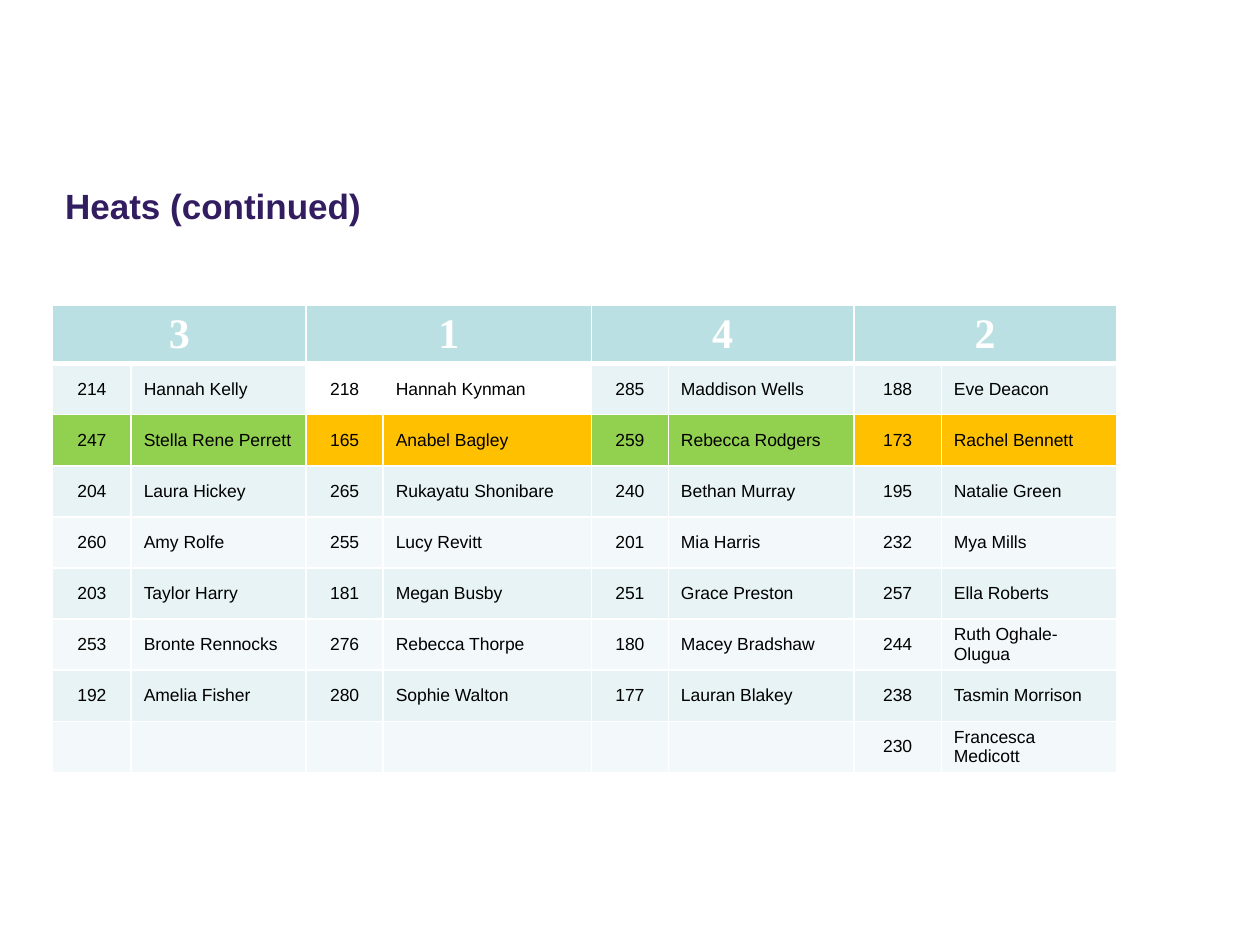
from dataclasses import dataclass

from lxml import etree
from pptx import Presentation
from pptx.dml.color import RGBColor
from pptx.enum import text
from pptx.oxml import ns
from pptx.util import Pt


@dataclass(frozen=True)
class Theme:
    title: str = "321D60"
    ink: str = "000000"
    white: str = "FFFFFF"
    header: str = "BBE0E3"
    bands: tuple = ("E7F3F4", "F3F9FA")
    green: str = "92D050"
    amber: str = "FFC000"
    sans: str = "Arial"
    serif: str = "Times New Roman"
    title_size: int = 20
    header_size: int = 24
    body_size: int = 10


THEME = Theme()
COLUMN_WIDTHS = (45, 100, 44, 119, 44, 106, 50, 100)
HEADER_HEIGHT, ROW_HEIGHT = 33.6, 29.2
HIGHLIGHT_ROW = 2

# Heat number, highlight colour, then runners as (bib, name)
HEATS = (
    ("3", THEME.green, (
        ("214", "Hannah Kelly"), ("247", "Stella Rene Perrett"),
        ("204", "Laura Hickey"), ("260", "Amy Rolfe"),
        ("203", "Taylor Harry"), ("253", "Bronte Rennocks"),
        ("192", "Amelia Fisher"))),
    ("1", THEME.amber, (
        ("218", "Hannah Kynman"), ("165", "Anabel Bagley"),
        ("265", "Rukayatu Shonibare"), ("255", "Lucy Revitt"),
        ("181", "Megan Busby"), ("276", "Rebecca Thorpe"),
        ("280", "Sophie Walton"))),
    ("4", THEME.green, (
        ("285", "Maddison Wells"), ("259", "Rebecca Rodgers"),
        ("240", "Bethan Murray"), ("201", "Mia Harris"),
        ("251", "Grace Preston"), ("180", "Macey Bradshaw"),
        ("177", "Lauran Blakey"))),
    ("2", THEME.amber, (
        ("188", "Eve Deacon"), ("173", "Rachel Bennett"),
        ("195", "Natalie Green"), ("232", "Mya Mills"),
        ("257", "Ella Roberts"), ("244", "Ruth Oghale-Olugua"),
        ("238", "Tasmin Morrison"), ("230", "Francesca Medicott"))),
)
UNFILLED_BIB = "218"


def set_font(paragraph, name, size, color, bold=False):
    font = paragraph.font
    font.name, font.size, font.bold = name, Pt(size), bold
    font.color.rgb = RGBColor.from_string(color)


def set_borders(cell, top=1, bottom=1):
    """Draw white cell edges; widths are in points."""
    properties = cell._tc.get_or_add_tcPr()
    edges = (("lnL", 1), ("lnR", 1), ("lnT", top), ("lnB", bottom))
    for index, (tag, width) in enumerate(edges):
        line = etree.Element(ns.qn(f"a:{tag}"), w=str(Pt(width)))
        fill = etree.SubElement(line, ns.qn("a:solidFill"))
        etree.SubElement(fill, ns.qn("a:srgbClr"), val=THEME.white)
        properties.insert(index, line)


def format_cell(cell, fill, top=1, bottom=1):
    cell.vertical_anchor = text.MSO_ANCHOR.MIDDLE
    cell.margin_left = cell.margin_right = Pt(7.2)
    cell.margin_top = cell.margin_bottom = Pt(3)
    if fill:
        cell.fill.solid()
        cell.fill.fore_color.rgb = RGBColor.from_string(fill)
    else:
        cell.fill.background()
    set_borders(cell, top, bottom)


def write_cell(cell, words, centred, *font):
    paragraph = cell.text_frame.paragraphs[0]
    paragraph.text = words
    paragraph.alignment = text.PP_ALIGN.CENTER if centred else text.PP_ALIGN.LEFT
    set_font(paragraph, *font)


def add_title(slide, words):
    title = slide.shapes.title
    title.left, title.top, title.width, title.height = Pt(30), Pt(102), Pt(480), Pt(42)
    frame = title.text_frame
    frame.text = words
    frame.vertical_anchor = text.MSO_ANCHOR.TOP
    paragraph = frame.paragraphs[0]
    paragraph.alignment = text.PP_ALIGN.LEFT
    set_font(paragraph, THEME.sans, THEME.title_size, THEME.title, True)


def fill_heat(table, column, number, highlight, runners):
    """Fill the bib and name columns of one heat under its merged header."""
    header = table.cell(0, column)
    header.merge(table.cell(0, column + 1))
    write_cell(header, number, True, THEME.serif, THEME.header_size, THEME.white, True)
    for offset in (0, 1):
        format_cell(table.cell(0, column + offset), THEME.header, bottom=3)

    for row in range(1, len(table.rows)):
        runner = runners[row - 1] if row <= len(runners) else ("", "")
        fill = highlight if row == HIGHLIGHT_ROW else THEME.bands[(row - 1) % 2]
        if runner[0] == UNFILLED_BIB:
            fill = None
        for offset, words in enumerate(runner):
            cell = table.cell(row, column + offset)
            write_cell(cell, words, offset == 0, THEME.sans, THEME.body_size, THEME.ink)
            format_cell(cell, fill, top=3 if row == 1 else 1)


def add_heats_table(slide):
    row_count = 1 + max(len(runners) for _, _, runners in HEATS)
    height = HEADER_HEIGHT + ROW_HEIGHT * (row_count - 1)
    table = slide.shapes.add_table(
        row_count, len(COLUMN_WIDTHS), Pt(30), Pt(174.2),
        Pt(sum(COLUMN_WIDTHS)), Pt(height)).table
    table.first_row = table.horz_banding = False
    for column, width in zip(table.columns, COLUMN_WIDTHS):
        column.width = Pt(width)
    for index, row in enumerate(table.rows):
        row.height = Pt(ROW_HEIGHT if index else HEADER_HEIGHT)
    for index, heat in enumerate(HEATS):
        fill_heat(table, 2 * index, *heat)


def main():
    presentation = Presentation()
    presentation.slide_width, presentation.slide_height = Pt(720), Pt(540)
    slide = presentation.slides.add_slide(presentation.slide_layouts.get_by_name("Title Only"))
    add_title(slide, "Heats (continued)")
    add_heats_table(slide)
    presentation.save("out.pptx")


if __name__ == "__main__":
    main()
